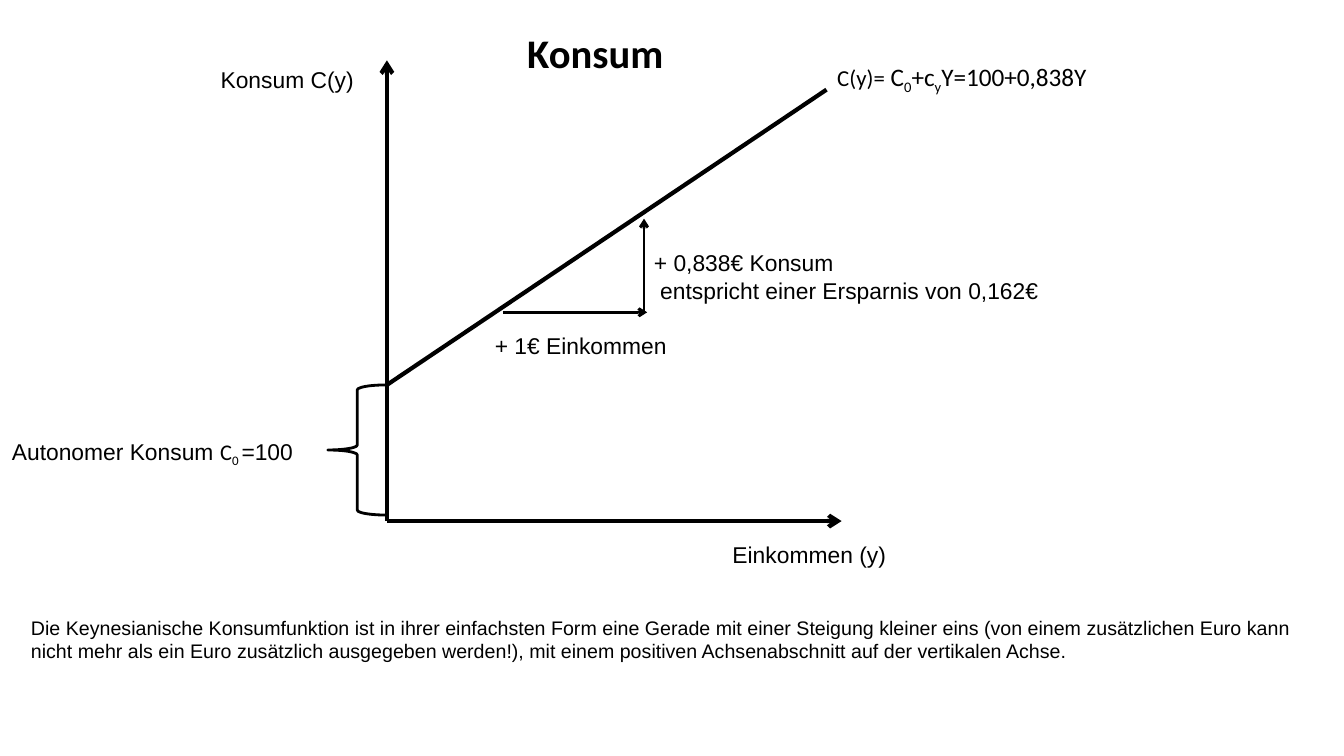
from dataclasses import dataclass

from lxml import etree
from pptx import Presentation
from pptx import util as u
from pptx.dml.color import RGBColor
from pptx.enum import shapes, text
from pptx.oxml import ns
from pptx.slide import Slide

COLOURS = {"ink": "000000", "paper": "FFFFFF"}
INK = RGBColor.from_string(COLOURS["ink"])
ORIGIN_X, ORIGIN_Y = 9.75, 13.13
INTERCEPT_Y = 9.7
SUBSCRIPT = "-25000"


@dataclass
class Piece:
    wording: str
    size: float = 16.3
    font: str = "Arial"
    subscript: bool = False


@dataclass
class Label:
    left: float
    top: float
    width: float
    height: float
    pieces: list[Piece]
    wrap: bool = False


@dataclass
class Line:
    start: tuple[float, float]
    end: tuple[float, float]
    weight: float
    arrow: bool = True


LINES = [
    Line((ORIGIN_X, ORIGIN_Y), (21.21, ORIGIN_Y), 3),
    Line((ORIGIN_X, ORIGIN_Y), (ORIGIN_X, 1.52), 3),
    Line((ORIGIN_X, INTERCEPT_Y), (20.83, 2.26), 3, arrow=False),
    Line((12.67, 7.87), (16.31, 7.87), 2),
    Line((16.23, 7.87), (16.23, 5.51), 2),
]

LABELS = [
    Label(0.05, 10.9, 7.72, 0.97, [
        Piece("Autonomer Konsum "),
        Piece("C", 16, "Calibri"),
        Piece("0 ", 16, "Calibri", subscript=True),
        Piece("=100"),
    ]),
    Label(18.21, 13.49, 4.42, 0.97, [Piece("Einkommen (y)")]),
    Label(5.31, 1.52, 4.17, 0.97, [Piece("Konsum C(y)")], wrap=True),
    Label(16.23, 6.15, 10.34, 1.65,
          [Piece("+ 0,838€ Konsum\v entspricht einer Ersparnis von 0,162€")]),
    Label(12.22, 8.23, 6.43, 0.97, [Piece("+ 1€ Einkommen")], wrap=True),
    Label(20.85, 1.42, 6.93, 1.02, [
        Piece("C(y)=", font="Calibri"),
        Piece(" C", 18, "Calibri"),
        Piece("0", 18, "Calibri", subscript=True),
        Piece("+c", 18, "Calibri"),
        Piece("y", 18, "Calibri", subscript=True),
        Piece("Y=100+0,838Y", 18, "Calibri"),
    ]),
    Label(0.53, 15.39, 33.32, 1.8, [Piece(
        "Die Keynesianische Konsumfunktion ist in ihrer einfachsten Form eine "
        "Gerade mit einer Steigung kleiner eins (von einem zusätzlichen Euro "
        "kann nicht mehr als ein Euro zusätzlich ausgegeben werden!), mit einem "
        "positiven Achsenabschnitt auf der vertikalen Achse.", 14)], wrap=True),
]


def format_run(run, size: float, font: str, bold: bool = False) -> None:
    run.font.size = u.Pt(size)
    run.font.name = font
    run.font.bold = bold
    run.font.color.rgb = INK


def add_title(slide: Slide, wording: str) -> None:
    title = slide.shapes.title
    title.left, title.top = u.Cm(4.45), u.Cm(0.28)
    title.width, title.height = u.Cm(21.11), u.Cm(2.06)
    title.text_frame.text = wording
    title.text_frame.vertical_anchor = text.MSO_ANCHOR.MIDDLE
    paragraph = title.text_frame.paragraphs[0]
    paragraph.alignment = text.PP_ALIGN.CENTER
    format_run(paragraph.runs[0], 29, "Calibri", bold=True)


def add_line(slide: Slide, line: Line) -> None:
    connector = slide.shapes.add_connector(
        shapes.MSO_CONNECTOR.STRAIGHT,
        *(u.Cm(value) for value in line.start + line.end))
    connector.line.color.rgb = INK
    connector.line.width = u.Pt(line.weight)
    properties = connector._element.spPr
    if line.arrow:
        outline = properties.find(ns.qn("a:ln"))
        etree.SubElement(outline, ns.qn("a:tailEnd"), type="arrow")
    etree.SubElement(properties, ns.qn("a:effectLst"))


def add_brace(slide: Slide) -> None:
    width = 1.49
    brace = slide.shapes.add_shape(
        shapes.MSO_SHAPE.LEFT_BRACE, u.Cm(ORIGIN_X - width), u.Cm(INTERCEPT_Y),
        u.Cm(width), u.Cm(3.28))
    brace.shadow.inherit = False
    brace.fill.background()
    brace.line.color.rgb = INK
    brace.line.width = u.Pt(2)


def add_label(slide: Slide, label: Label) -> None:
    box = slide.shapes.add_textbox(
        u.Cm(label.left), u.Cm(label.top), u.Cm(label.width), u.Cm(label.height))
    box.text_frame.word_wrap = label.wrap
    paragraph = box.text_frame.paragraphs[0]
    paragraph.alignment = text.PP_ALIGN.LEFT
    for piece in label.pieces:
        known = len(paragraph.runs)
        if known:
            paragraph.add_run().text = piece.wording
        else:
            paragraph.text = piece.wording
        for run in paragraph.runs[known:]:
            format_run(run, piece.size, piece.font)
            if piece.subscript:
                run._r.get_or_add_rPr().set("baseline", SUBSCRIPT)


def main() -> None:
    presentation = Presentation()
    presentation.slide_width = u.Cm(33.87)
    presentation.slide_height = u.Cm(19.05)
    slide = presentation.slides.add_slide(presentation.slide_layouts[5])
    background = slide.background.fill
    background.solid()
    background.fore_color.rgb = RGBColor.from_string(COLOURS["paper"])

    # Heading
    add_title(slide, "Konsum")

    # Axes, consumption function and slope triangle
    for line in LINES:
        add_line(slide, line)

    # Autonomous consumption
    add_brace(slide)

    # Labels and explanation
    for label in LABELS:
        add_label(slide, label)

    presentation.save("out.pptx")


if __name__ == "__main__":
    main()
